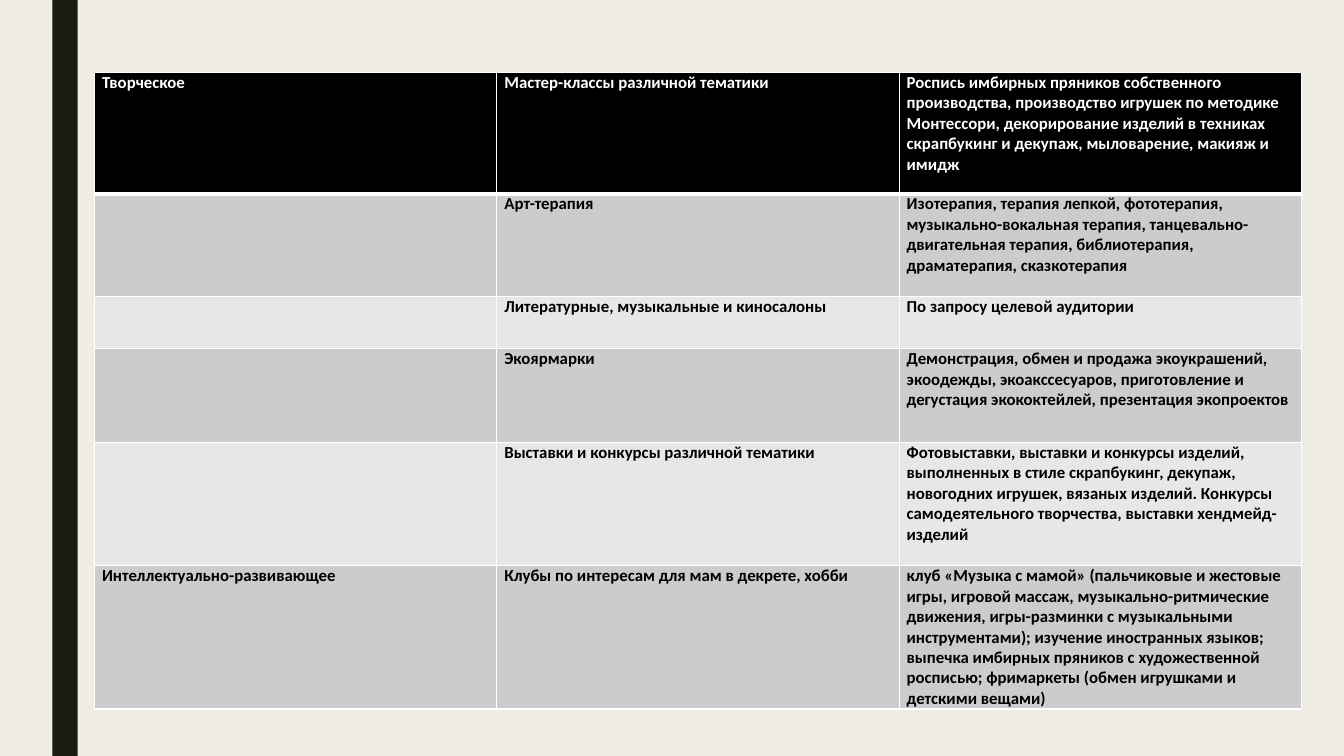
"""Build a slide with a table of leisure activities by direction."""
from dataclasses import dataclass

import lxml.etree
import pptx
import pptx.dml.color
import pptx.enum.shapes
import pptx.oxml.ns
import pptx.util

Pt = pptx.util.Pt
FONT = "Calibri"
WHITE, BLACK = "FFFFFF", "000000"
DARK_BAND, LIGHT_BAND = "CCCCCC", "E7E7E7"
COLUMN_WIDTH = 287.4
SIDE_MARGIN = 5.4
THIN, THICK = 1, 3


@dataclass
class Activity:
    height: float
    direction: str
    form: str
    content: tuple[str, ...]


ACTIVITIES = [
    Activity(87, "Творческое", "Мастер-классы различной тематики", (
        "Роспись имбирных пряников собственного производства, производство игрушек "
        "по методике Монтессори, декорирование изделий в техниках скрапбукинг и "
        "декупаж, мыловарение, макияж и имидж",)),
    Activity(73.5, "", "Арт-терапия", (
        "Изотерапия, терапия лепкой, фототерапия, музыкально-вокальная терапия, "
        "танцевально-двигательная терапия, библиотерапия, драматерапия, "
        "сказкотерапия",)),
    Activity(37, "", "Литературные, музыкальные и киносалоны", (
        "По запросу целевой аудитории",)),
    Activity(67, "", "Экоярмарки", (
        "Демонстрация, обмен и продажа экоукрашений, экоодежды, экоакссесуаров, "
        "приготовление и дегустация экококтейлей, презентация экопроектов",)),
    Activity(88, "", "Выставки и конкурсы различной тематики", (
        "Фотовыставки, выставки и конкурсы изделий, выполненных в стиле скрапбукинг, "
        "декупаж, новогодних игрушек, вязаных изделий. Конкурсы самодеятельного "
        "творчества, выставки хендмейд-изделий",)),
    Activity(102.5, "Интеллектуально-развивающее",
             "Клубы по интересам для мам в декрете, хобби", (
        "клуб «Музыка с мамой» (пальчиковые и жестовые игры, игровой массаж, "
        "музыкально-ритмические движения, игры-разминки с музыкальными "
        "инструментами); изучение иностранных языков;",
        "выпечка имбирных пряников с художественной росписью; фримаркеты (обмен "
        "игрушками и детскими вещами)")),
]


def paint(fill, color: str) -> None:
    fill.solid()
    fill.fore_color.rgb = pptx.dml.color.RGBColor.from_string(color)


def add_borders(cell, top: float, bottom: float) -> None:
    properties = cell._tc.get_or_add_tcPr()
    for side, width in {"L": THIN, "R": THIN, "T": top, "B": bottom}.items():
        line = lxml.etree.SubElement(
            properties, pptx.oxml.ns.qn(f"a:ln{side}"), w=str(Pt(width)))
        solid = lxml.etree.SubElement(line, pptx.oxml.ns.qn("a:solidFill"))
        lxml.etree.SubElement(solid, pptx.oxml.ns.qn("a:srgbClr"), val=WHITE)


def write_cell(cell, paragraphs: tuple[str, ...], color: str) -> None:
    cell.margin_left = cell.margin_right = Pt(SIDE_MARGIN)
    cell.margin_top = cell.margin_bottom = Pt(0)
    cell.text = "\n".join(paragraphs)
    for para in cell.text_frame.paragraphs:
        para.font.name = FONT
        para.font.size = Pt(12)
        para.font.bold = True
        paint(para.font.fill, color)


def add_side_bar(page, height: int) -> None:
    bar = page.shapes.add_shape(
        pptx.enum.shapes.MSO_SHAPE.RECTANGLE, Pt(37.44), Pt(0), Pt(18), height)
    bar.shadow.inherit = False
    paint(bar.fill, "191B0E")
    bar.line.fill.background()


def add_activity_table(page, activities: list[Activity]) -> None:
    total_height = sum(activity.height for activity in activities)
    table = page.shapes.add_table(
        len(activities), 3, Pt(67.5), Pt(51.6),
        Pt(3 * COLUMN_WIDTH), Pt(total_height)).table
    for column in table.columns:
        column.width = Pt(COLUMN_WIDTH)
    for index, activity in enumerate(activities):
        table.rows[index].height = Pt(activity.height)
        header = index == 0
        band = BLACK if header else DARK_BAND if index % 2 else LIGHT_BAND
        texts = ((activity.direction,), (activity.form,), activity.content)
        for cell, paragraphs in zip(table.rows[index].cells, texts):
            write_cell(cell, paragraphs, WHITE if header else BLACK)
            add_borders(cell, THICK if index == 1 else THIN, THICK if header else THIN)
            paint(cell.fill, band)


def main() -> None:
    deck = pptx.Presentation()
    deck.slide_width, deck.slide_height = Pt(960), Pt(540)
    page = deck.slides.add_slide(deck.slide_layouts[6])
    paint(page.background.fill, "EFEDE3")
    add_side_bar(page, deck.slide_height)
    add_activity_table(page, ACTIVITIES)
    deck.save("out.pptx")


if __name__ == "__main__":
    main()
